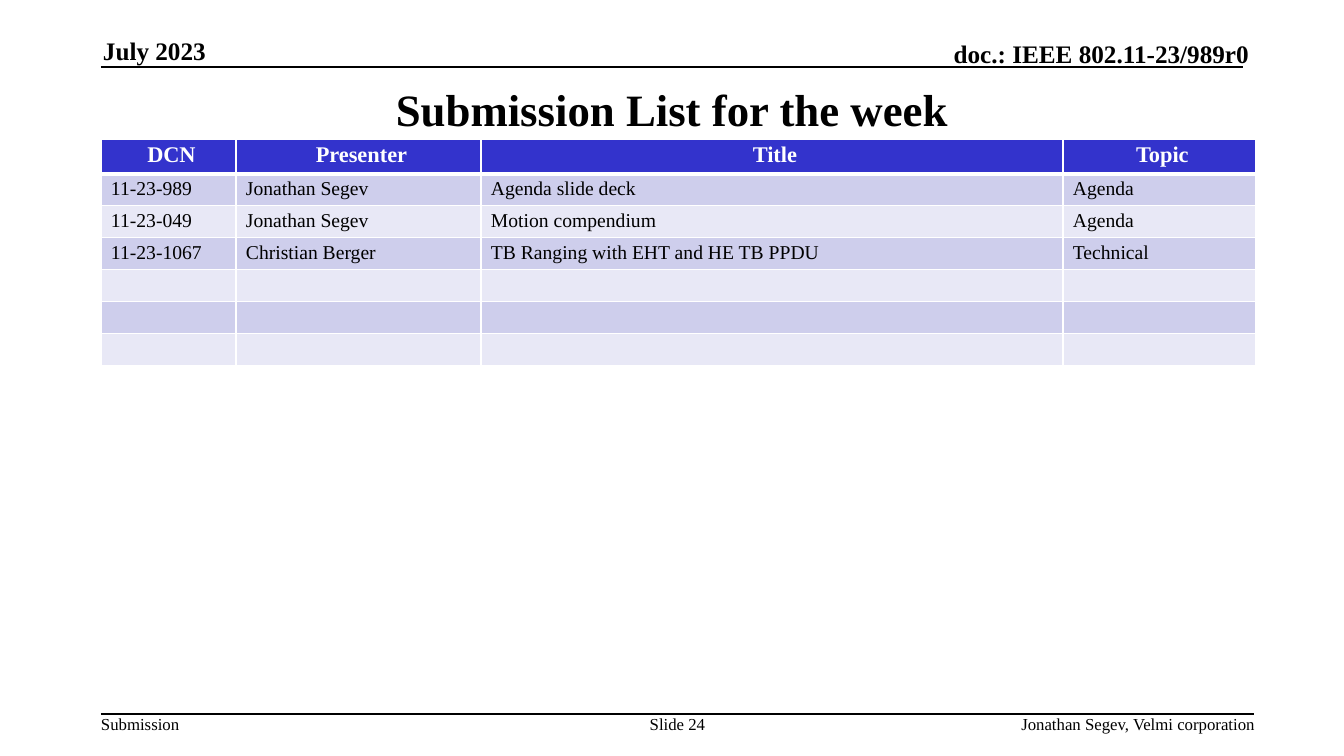
from dataclasses import dataclass

from lxml.etree import SubElement
from pptx import Presentation
from pptx.dml.color import RGBColor
from pptx.enum.shapes import MSO_CONNECTOR
from pptx.enum.text import MSO_ANCHOR, PP_ALIGN
from pptx.oxml.ns import qn
from pptx.util import Pt

PX = 12192000 / 1344


def px(length):
    """Turn pixels into EMU."""
    return round(length * PX)


@dataclass(frozen=True)
class Theme:
    """Colours and type sizes of the deck."""
    font: str = "Times New Roman"
    ink: str = "000000"
    paper: str = "FFFFFF"
    header: str = "3333CC"
    bands: tuple = ("CECEEC", "E8E8F6")
    title: int = 32
    running: int = 18
    heading: int = 16
    body: int = 14
    footer: int = 12


class Page:
    """Draws styled elements on one slide."""

    def __init__(self, slide, theme):
        """Keep the slide and its theme."""
        self.slide = slide
        self.theme = theme

    def span(self, para, text, size, color, bold=False, align=PP_ALIGN.LEFT):
        """Add one styled run to a paragraph."""
        para.alignment = align
        span = para.add_run()
        span.text = text
        span.font.name = self.theme.font
        span.font.size = Pt(size)
        span.font.bold = bold
        span.font.color.rgb = RGBColor.from_string(color)

    def text(self, frame, text, size, bold=False, align=PP_ALIGN.LEFT,
             anchor=MSO_ANCHOR.TOP):
        """Place a text box without margins."""
        box = self.slide.shapes.add_textbox(*map(px, frame)).text_frame
        box.word_wrap = True
        box.vertical_anchor = anchor
        box.margin_left = box.margin_right = 0
        box.margin_top = box.margin_bottom = 0
        self.span(box.paragraphs[0], text, size, self.theme.ink, bold, align)

    def rule(self, left, top, right, bottom):
        """Draw a thin straight line."""
        line = self.slide.shapes.add_connector(
            MSO_CONNECTOR.STRAIGHT, *map(px, (left, top, right, bottom)))
        line.line.width = Pt(1)
        line.line.color.rgb = RGBColor.from_string(self.theme.ink)
        SubElement(line._element.spPr, qn("a:effectLst"))

    def border(self, cell, side, width):
        """Give one side of a cell a solid border."""
        edge = SubElement(cell._tc.get_or_add_tcPr(), qn(f"a:ln{side}"),
                          w=str(Pt(width)))
        fill = SubElement(edge, qn("a:solidFill"))
        SubElement(fill, qn("a:srgbClr"), val=self.theme.paper)

    def cell(self, cell, text, row):
        """Style and fill one table cell."""
        theme = self.theme
        heading = row == 0
        cell.margin_left = px(10)
        cell.margin_right = px(4 if heading else 10)
        cell.margin_top = cell.margin_bottom = px(4)
        for side in "LRTB":
            thick = (row, side) in ((0, "B"), (1, "T"))
            self.border(cell, side, 3 if thick else 1)
        color = theme.header if heading else theme.bands[(row - 1) % 2]
        cell.fill.solid()
        cell.fill.fore_color.rgb = RGBColor.from_string(color)
        para = cell.text_frame.paragraphs[0]
        if heading:
            self.span(para, text, theme.heading, theme.paper, True, PP_ALIGN.CENTER)
        elif text:
            self.span(para, text, theme.body, theme.ink)
        else:
            SubElement(para._p, qn("a:endParaRPr"), sz=str(theme.body * 100))

    def table(self, left, top, widths, heights, rows):
        """Build a banded table under a heading row."""
        table = self.slide.shapes.add_table(
            len(heights), len(widths), px(left), px(top),
            px(sum(widths)), px(sum(heights))).table
        for column, width in zip(table.columns, widths):
            column.width = px(width)
        for index, height in enumerate(heights):
            table.rows[index].height = px(height)
            texts = rows[index] if index < len(rows) else [""] * len(widths)
            for column, text in enumerate(texts):
                self.cell(table.cell(index, column), text, index)


def main():
    """Build and save the submission list."""
    deck = Presentation()
    deck.slide_width, deck.slide_height = px(1344), px(756)
    theme = Theme()
    page = Page(deck.slides.add_slide(deck.slide_layouts[6]), theme)

    page.rule(101, 67, 1243, 67)
    page.rule(101, 714, 1254, 714)
    page.text((103, 36, 275, 30), "July 2023", theme.running, True,
              anchor=MSO_ANCHOR.BOTTOM)
    page.text((735, 39, 514, 30), "doc.: IEEE 802.11-23/989r0", theme.running,
              True, PP_ALIGN.RIGHT, MSO_ANCHOR.BOTTOM)
    page.text((101, 76, 1142, 65), "Submission List for the week", theme.title,
              True, PP_ALIGN.CENTER, MSO_ANCHOR.MIDDLE)
    page.table(101, 139, (135, 245, 582, 193), [34] + [32] * 6, (
        ("DCN", "Presenter", "Title", "Topic"),
        ("11-23-989", "Jonathan Segev", "Agenda slide deck", "Agenda"),
        ("11-23-049", "Jonathan Segev", "Motion compendium", "Agenda"),
        ("11-23-1067", "Christian Berger", "TB Ranging with EHT and HE TB PPDU",
         "Technical"),
    ))
    page.text((101, 714, 80, 20), "Submission", theme.footer)
    page.text((639, 714, 77, 40), "Slide 24", theme.footer, align=PP_ALIGN.CENTER)
    page.text((787, 714, 468, 20), "Jonathan Segev, Velmi corporation",
              theme.footer, align=PP_ALIGN.RIGHT)
    deck.save("out.pptx")


if __name__ == "__main__":
    main()
